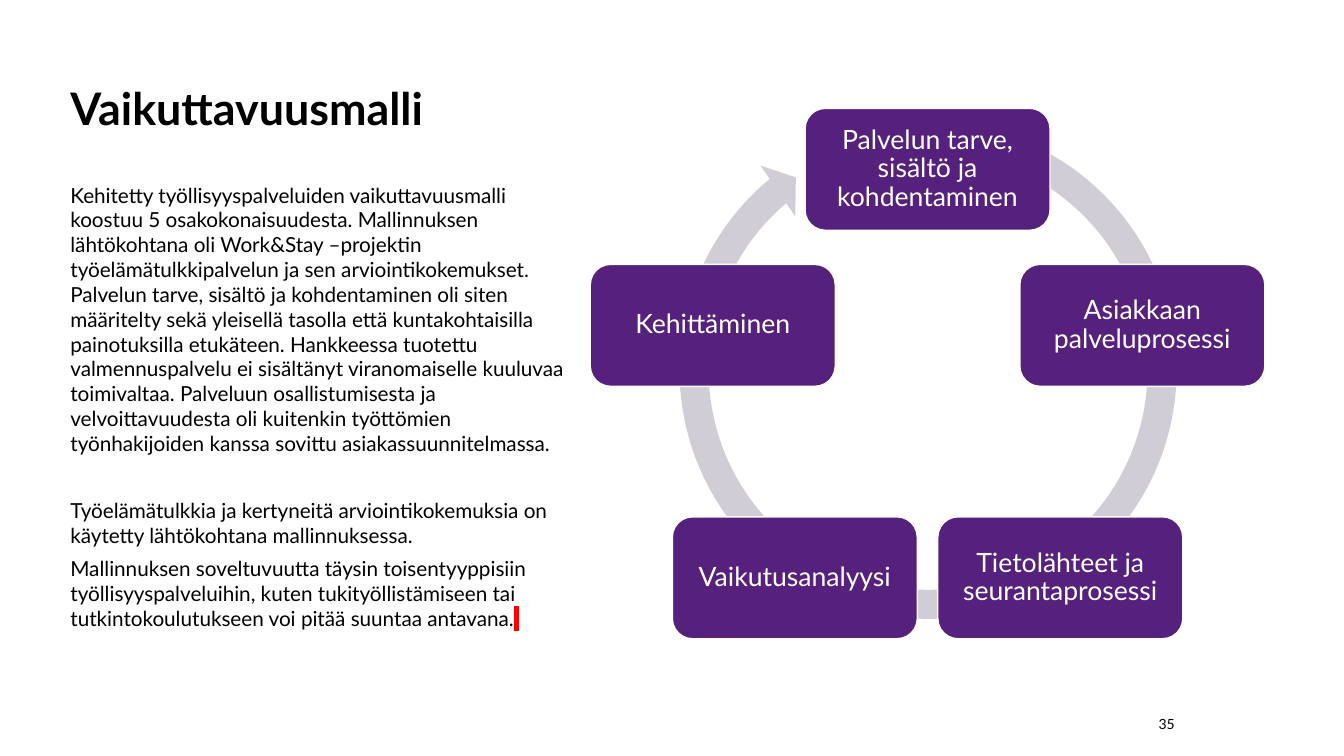
from dataclasses import dataclass
from math import cos, radians, sin

from lxml.etree import SubElement
from pptx import Presentation
from pptx.dml.color import RGBColor
from pptx.enum.shapes import MSO_SHAPE
from pptx.enum.text import MSO_ANCHOR, PP_ALIGN
from pptx.oxml.ns import qn
from pptx.shapes.autoshape import Shape
from pptx.slide import Slide
from pptx.text.text import Font, TextFrame
from pptx.util import Inches, Pt

PURPLE = "56207D"
GREY = "D1CDD7"
WHITE = "FFFFFF"
BLACK = "000000"
RED = "FF0000"

CYCLE_X, CYCLE_Y, CYCLE_RADIUS = 9.2, 3.92, 2.24
NODE_WIDTH, NODE_HEIGHT = 2.43, 1.21
STAGES = [
    "Palvelun tarve, sisältö ja kohdentaminen",
    "Asiakkaan palveluprosessi",
    "Tietolähteet ja seurantaprosessi",
    "Vaikutusanalyysi",
    "Kehittäminen",
]


@dataclass
class Box:
    left: float
    top: float
    width: float
    height: float

    def lengths(self) -> tuple[int, int, int, int]:
        return Inches(self.left), Inches(self.top), Inches(self.width), Inches(self.height)


@dataclass
class BodyParagraph:
    text: str
    space_after: float = 6


BODY = [
    BodyParagraph(
        "Kehitetty työllisyyspalveluiden vaikuttavuusmalli koostuu 5 osakokonaisuudesta. "
        "Mallinnuksen lähtökohtana oli Work&Stay –projektin työelämätulkkipalvelun ja sen "
        "arviointikokemukset. Palvelun tarve, sisältö ja kohdentaminen oli siten määritelty "
        "sekä yleisellä tasolla että kuntakohtaisilla painotuksilla etukäteen. Hankkeessa "
        "tuotettu valmennuspalvelu ei sisältänyt viranomaiselle kuuluvaa toimivaltaa. "
        "Palveluun osallistumisesta ja velvoittavuudesta oli kuitenkin työttömien "
        "työnhakijoiden kanssa sovittu asiakassuunnitelmassa.",
        30,
    ),
    BodyParagraph(
        "Työelämätulkkia ja kertyneitä arviointikokemuksia on käytetty lähtökohtana mallinnuksessa."
    ),
    BodyParagraph(
        "Mallinnuksen soveltuvuutta täysin toisentyyppisiin työllisyyspalveluihin, kuten "
        "tukityöllistämiseen tai tutkintokoulutukseen voi pitää suuntaa antavana."
    ),
]


def color(value: str) -> RGBColor:
    return RGBColor.from_string(value)


def set_font(font: Font, size: float, value: str = BLACK, bold: bool = False) -> None:
    font.name = "Lato"
    font.size = Pt(size)
    font.bold = bold
    font.color.rgb = color(value)


def add_text_frame(slide: Slide, box: Box, anchor: MSO_ANCHOR = MSO_ANCHOR.MIDDLE) -> TextFrame:
    frame = slide.shapes.add_textbox(*box.lengths()).text_frame
    frame.word_wrap = True
    frame.vertical_anchor = anchor
    return frame


def add_line(
    slide: Slide, box: Box, text: str, size: float, bold: bool = False, align: PP_ALIGN = PP_ALIGN.LEFT
) -> None:
    paragraph = add_text_frame(slide, box).paragraphs[0]
    paragraph.text = text
    paragraph.alignment = align
    set_font(paragraph.font, size, bold=bold)


def add_filled_shape(slide: Slide, kind: MSO_SHAPE, box: Box, fill: str) -> Shape:
    shape = slide.shapes.add_shape(kind, *box.lengths())
    shape.shadow.inherit = False
    shape.fill.solid()
    shape.fill.fore_color.rgb = color(fill)
    return shape


def add_cycle_arrow(slide: Slide) -> None:
    arrow = add_filled_shape(slide, MSO_SHAPE.CIRCULAR_ARROW, Box(6.58, 1.05, 5.25, 5.25), GREY)
    arrow.line.fill.background()
    for index, value in enumerate([0.055, 3.307, 138.049, 173.683, 0.058]):
        arrow.adjustments[index] = value


def add_stage(slide: Slide, index: int, text: str) -> None:
    angle = radians(index * 360 / len(STAGES))
    box = Box(
        CYCLE_X + CYCLE_RADIUS * sin(angle) - NODE_WIDTH / 2,
        CYCLE_Y - CYCLE_RADIUS * cos(angle) - NODE_HEIGHT / 2,
        NODE_WIDTH,
        NODE_HEIGHT,
    )
    node = add_filled_shape(slide, MSO_SHAPE.ROUNDED_RECTANGLE, box, PURPLE)
    node.line.color.rgb = color(WHITE)
    node.line.width = Pt(1)
    frame = node.text_frame
    frame.word_wrap = True
    frame.vertical_anchor = MSO_ANCHOR.MIDDLE
    frame.margin_left = frame.margin_right = Inches(0.08)
    frame.margin_top = frame.margin_bottom = Inches(0.08)
    paragraph = frame.paragraphs[0]
    paragraph.text = text
    paragraph.alignment = PP_ALIGN.CENTER
    paragraph.line_spacing = 0.9
    set_font(paragraph.font, 19, WHITE)


def add_body(slide: Slide) -> None:
    frame = add_text_frame(slide, Box(0.6, 1.76, 5.16, 4.95), MSO_ANCHOR.TOP)
    for index, item in enumerate(BODY):
        paragraph = frame.add_paragraph() if index else frame.paragraphs[0]
        paragraph.text = item.text
        paragraph.space_after = Pt(item.space_after)
        set_font(paragraph.font, 14.8)
    marker = frame.paragraphs[-1].add_run()
    marker.text = " "
    highlight = SubElement(marker.font._element, qn("a:highlight"))
    SubElement(highlight, qn("a:srgbClr"), val=RED)


def main() -> None:
    presentation = Presentation()
    presentation.slide_width = Inches(13.33)
    presentation.slide_height = Inches(7.5)
    slide = presentation.slides.add_slide(presentation.slide_layouts[6])
    add_line(slide, Box(0.6, 0.5, 4.62, 1.13), "Vaikuttavuusmalli", 32, bold=True)
    add_cycle_arrow(slide)
    for index, text in enumerate(STAGES):
        add_stage(slide, index, text)
    add_body(slide)
    add_line(slide, Box(11.15, 6.98, 0.6, 0.4), "35", 10, align=PP_ALIGN.RIGHT)
    presentation.save("out.pptx")


if __name__ == "__main__":
    main()
